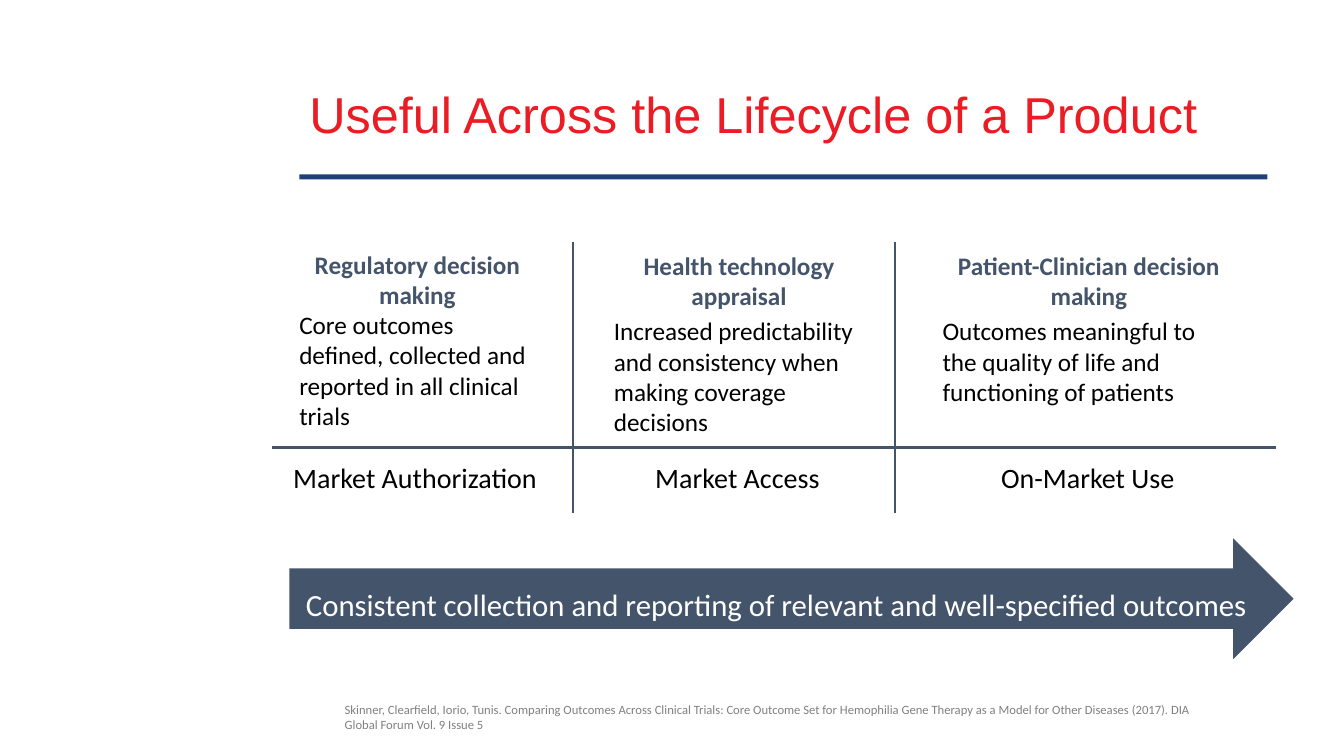
from lxml import etree
from pptx import Presentation
from pptx.dml.color import RGBColor
from pptx.enum import shapes, text
from pptx.oxml.ns import qn
from pptx.util import Inches, Pt

COLORS = {"slate": "44546A", "navy": "1F3F78", "red": "EB1C24",
          "black": "000000", "white": "FFFFFF", "gray": "808080"}
LEFT, CENTER = text.PP_ALIGN.LEFT, text.PP_ALIGN.CENTER
TOP, MIDDLE, BOTTOM = (text.MSO_ANCHOR.TOP, text.MSO_ANCHOR.MIDDLE,
                       text.MSO_ANCHOR.BOTTOM)
GRID_TOP, GRID_BOTTOM = 2.4, 5.09
STAGE_TOP, STAGE_HEIGHT = 4.52, 0.44

# Heading, benefit, (left, width, height), space before benefit, stage, (left, width)
COLUMNS = [
    ("Regulatory decision making",
     "Core outcomes defined, collected and reported in all clinical trials",
     (2.87, 2.54, 1.92), 0, "Market Authorization", (2.81, 2.66)),
    ("Health technology appraisal",
     "Increased predictability and consistency when making coverage decisions",
     (5.99, 2.68, 1.98), 3.6, "Market Access", (6.4, 1.86)),
    ("Patient-Clinician decision making",
     "Outcomes meaningful to the quality of life and functioning of patients",
     (9.25, 3.1, 1.68), 3.6, "On-Market Use", (9.83, 1.95)),
]


def rgb(name):
    return RGBColor.from_string(COLORS[name])


def write(para, words, size, color="black", font="Calibri", bold=False,
          align=LEFT, before=0, line_spacing=None, margin=0):
    if margin:
        para._p.get_or_add_pPr().set("marL", str(Inches(margin)))
    para.alignment = align
    if before:
        para.space_before = Pt(before)
    if line_spacing:
        para.line_spacing = line_spacing
    span = para.add_run()
    span.text = words
    span.font.name, span.font.size, span.font.bold = font, Pt(size), bold
    span.font.color.rgb = rgb(color)


def add_box(page, left, top, width, height, anchor=TOP, wrap=True):
    """Add an empty text box and return its text frame."""
    box = page.shapes.add_textbox(*map(Inches, (left, top, width, height)))
    box.text_frame.word_wrap = wrap
    box.text_frame.vertical_anchor = anchor
    return box.text_frame


def add_block(page, kind, color, left, top, width, height):
    """Add a plain filled preset shape."""
    block = page.shapes.add_shape(kind, *map(Inches, (left, top, width, height)))
    block.shadow.inherit = False
    block.fill.solid()
    block.fill.fore_color.rgb = rgb(color)
    block.line.fill.background()
    return block


def add_rule(page, x1, y1, x2, y2):
    rule = page.shapes.add_connector(shapes.MSO_CONNECTOR.STRAIGHT,
                                     *map(Inches, (x1, y1, x2, y2)))
    rule.line.color.rgb = rgb("slate")
    rule.line.width = Pt(1.5)
    etree.SubElement(rule._element.spPr, qn("a:effectLst"))


def add_title(page, words):
    add_block(page, shapes.MSO_SHAPE.RECTANGLE, "navy", 2.97, 1.73, 9.6, 0.05)
    frame = add_box(page, 2.97, 0.59, 9.6, 1.14, anchor=MIDDLE)
    write(frame.paragraphs[0], words, 36, color="red", font="Arial",
          line_spacing=0.9)


def add_column(page, heading, benefit, place, gap, stage, stage_place):
    left, width, height = place
    frame = add_box(page, left, GRID_TOP, width, height, anchor=BOTTOM)
    write(frame.paragraphs[0], heading, 18, color="slate", bold=True, align=CENTER)
    write(frame.add_paragraph(), benefit, 18, before=gap)
    left, width = stage_place
    frame = add_box(page, left, STAGE_TOP, width, STAGE_HEIGHT, wrap=False)
    write(frame.paragraphs[0], stage, 20)


def add_arrow(page, words):
    arrow = add_block(page, shapes.MSO_SHAPE.RIGHT_ARROW, "slate",
                      2.87, 5.34, 9.96, 1.2)
    frame = arrow.text_frame
    frame.word_wrap = True
    frame.vertical_anchor = MIDDLE
    frame.margin_left = frame.margin_right = Inches(0.13)
    frame.margin_top, frame.margin_bottom = Inches(0.1), Inches(0)
    write(frame.paragraphs[0], words, 22, color="white", align=CENTER)


def add_citation(page, words):
    frame = add_box(page, 3.07, 6.91, 8.82, 0.4)
    write(frame.paragraphs[0], words, 9, color="gray", margin=0.25)


def main():
    deck = Presentation()
    deck.slide_width, deck.slide_height = Inches(13.33), Inches(7.5)
    page = deck.slides.add_slide(deck.slide_layouts[6])
    add_title(page, "Useful Across the Lifecycle of a Product")
    add_rule(page, 2.7, 4.44, 12.66, 4.44)
    for x in (5.68, 8.88):
        add_rule(page, x, GRID_TOP, x, GRID_BOTTOM)
    for column in COLUMNS:
        add_column(page, *column)
    add_arrow(page, "Consistent collection and reporting of relevant "
                    "and well-specified outcomes")
    add_citation(page, "Skinner, Clearfield, Iorio, Tunis. Comparing Outcomes Across "
                       "Clinical Trials: Core Outcome Set for Hemophilia Gene Therapy "
                       "as a Model for Other Diseases (2017). "
                       "DIA Global Forum Vol. 9 Issue 5")
    deck.save("out.pptx")


if __name__ == "__main__":
    main()
